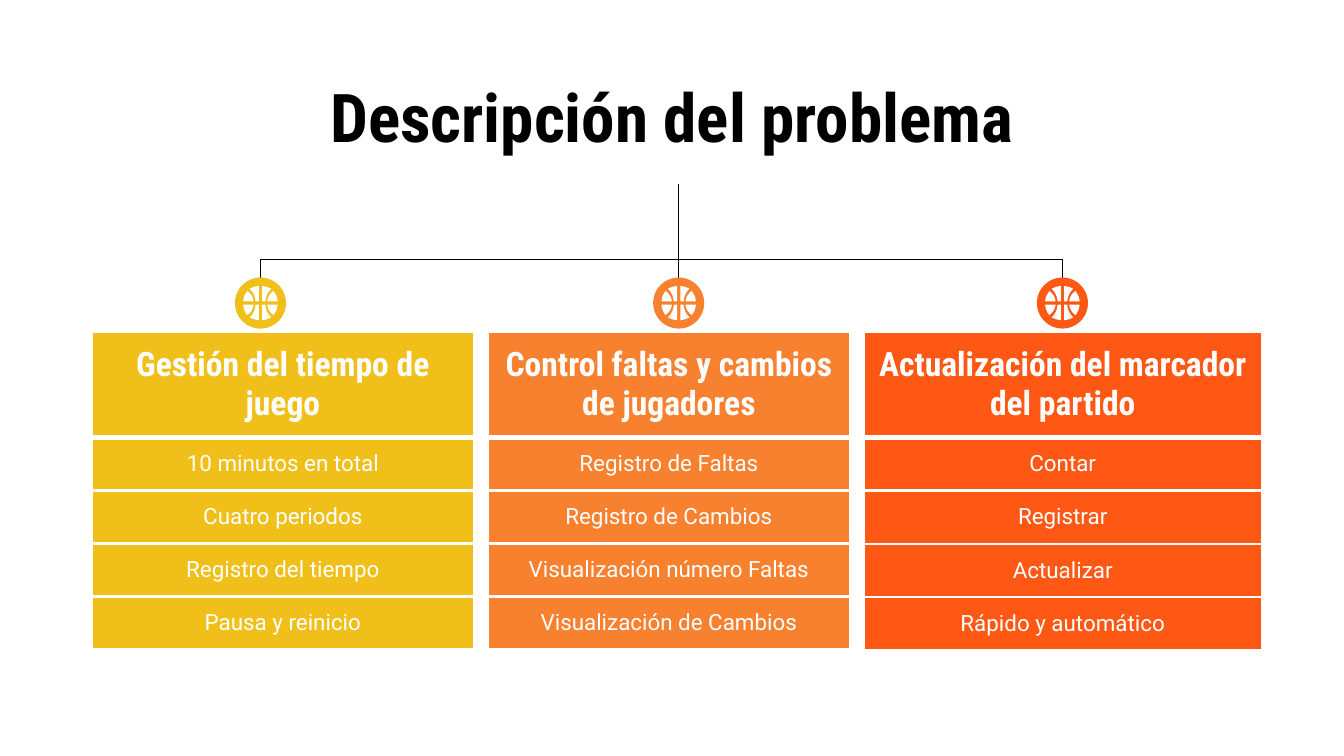
from dataclasses import dataclass
from itertools import product

from lxml import etree
from pptx import Presentation
from pptx.dml.color import RGBColor
from pptx.enum.shapes import MSO_CONNECTOR, MSO_SHAPE
from pptx.enum.text import MSO_ANCHOR, PP_ALIGN
from pptx.oxml.ns import qn
from pptx.util import Inches, Pt

STRAIGHT, ELBOW = MSO_CONNECTOR.STRAIGHT, MSO_CONNECTOR.ELBOW
OVAL = MSO_SHAPE.OVAL
TOP, MIDDLE, CENTER = MSO_ANCHOR.TOP, MSO_ANCHOR.MIDDLE, PP_ALIGN.CENTER
GRID_COLUMNS = 100
SLIDE_WIDTH = Inches(10)
Point = tuple[float, float]


@dataclass(frozen=True)
class Theme:
    black: str = "000000"
    white: str = "FFFFFF"
    yellow: str = "F0BF1A"
    orange: str = "F8812F"
    red: str = "FF5714"
    heading_font: str = "Roboto Condensed"
    body_font: str = "Roboto"
    title_size: float = 36
    heading_size: float = 18
    body_size: float = 12
    line: float = 0.75
    border: float = 1.5
    heavy_border: float = 3


@dataclass(frozen=True)
class Topic:
    left: float
    width: float
    ball_x: float
    color: str
    heading_height: float
    item_height: float
    heading: str
    items: tuple[str, ...]


@dataclass(frozen=True)
class Panel:
    points: tuple[Point, ...]
    curves: tuple[int, ...]


THEME = Theme()
TABLE_TOP, BALL_TOP, BALL_SIZE = 24.7, 20.65, 3.8
TRUNK_X, TRUNK_TOP, BRANCH_Y = 50.5, 13.7, 19.3
INSET, HEADING_INSET, ITEM_INSET = 1, 0.93, 0.97
TOPICS = (
    Topic(6.8, 28.5, 19.38, THEME.yellow, 5.2, 3.8, "Gestión del tiempo de juego",
          ("10 minutos en total", "Cuatro periodos", "Registro del tiempo", "Pausa y reinicio")),
    Topic(36.3, 26.95, TRUNK_X, THEME.orange, 5.2, 3.8, "Control faltas y cambios de jugadores",
          ("Registro de Faltas", "Registro de Cambios", "Visualización número Faltas",
           "Visualización de Cambios")),
    Topic(64.25, 29.65, 79.05, THEME.red, 7.8, 3.95, "Actualización del marcador del partido",
          ("Contar", "Registrar", "Actualizar", "Rápido y automático")),
)
INNER_PANEL = Panel(((0.12, 1.28), (0.37, 1.26), (0.6, 1.18), (0.8, 1.07),
                     (0.53, 0.81), (0.38, 0.49), (0.36, 0.12), (0.12, 0.12)), (1, 4))
OUTER_PANEL = Panel(((0.97, 0.9), (1.16, 0.69), (1.26, 0.42), (1.28, 0.12),
                     (0.5, 0.12), (0.54, 0.44), (0.7, 0.7), (0.97, 0.9)), (1, 5))


def u(units: float) -> int:
    return round(SLIDE_WIDTH * units / GRID_COLUMNS)


def rgb(color: str) -> RGBColor:
    return RGBColor.from_string(color)


def write(tf, text: str, font: str, size: float, color: str, bold: bool) -> None:
    tf.text = text
    p = tf.paragraphs[0]
    p.alignment = CENTER
    r = p.runs[0]
    r.font.name, r.font.size, r.font.bold = font, Pt(size), bold
    r.font.color.rgb = rgb(color)


def add_title(s, text: str) -> None:
    tf = s.shapes.add_textbox(u(5), u(4.6), u(90), u(6.3)).text_frame
    tf.word_wrap = True
    tf.vertical_anchor = TOP
    tf.margin_left = tf.margin_right = tf.margin_top = tf.margin_bottom = u(INSET)
    write(tf, text, THEME.heading_font, THEME.title_size, THEME.black, True)


def add_border(cell, side: str, width: float) -> None:
    tc_pr = cell._tc.get_or_add_tcPr()
    ln = etree.SubElement(tc_pr, qn(f"a:ln{side}"), w=str(Pt(width)))
    fill = etree.SubElement(ln, qn("a:solidFill"))
    etree.SubElement(fill, qn("a:srgbClr"), val=THEME.white)


def add_topic_table(s, topic: Topic) -> None:
    texts = (topic.heading, *topic.items)
    height = topic.heading_height + topic.item_height * len(topic.items)
    table = s.shapes.add_table(len(texts), 1, u(topic.left), u(TABLE_TOP),
                               u(topic.width), u(height)).table
    table.first_row = table.horz_banding = False
    for i, text in enumerate(texts):
        is_heading = i == 0
        table.rows[i].height = u(topic.heading_height if is_heading else topic.item_height)
        cell = table.cell(i, 0)
        cell.vertical_anchor = MIDDLE
        cell.margin_left = cell.margin_right = u(INSET)
        cell.margin_top = cell.margin_bottom = u(HEADING_INSET if is_heading else ITEM_INSET)
        heavy_side = {0: "B", 1: "T"}.get(i)
        for side in "LRTB":
            add_border(cell, side, THEME.heavy_border if side == heavy_side else THEME.border)
        cell.fill.solid()
        cell.fill.fore_color.rgb = rgb(topic.color)
        write(cell.text_frame, text,
              THEME.heading_font if is_heading else THEME.body_font,
              THEME.heading_size if is_heading else THEME.body_size, THEME.white, is_heading)


def add_line(s, start: Point, end: Point) -> None:
    is_bent = start[0] != end[0]
    c = s.shapes.add_connector(ELBOW if is_bent else STRAIGHT, *map(u, start + end))
    c.line.color.rgb = rgb(THEME.black)
    c.line.width = Pt(THEME.line)
    sp_pr = c._element.spPr
    if is_bent:
        sp_pr.find(qn("a:prstGeom")).set("prst", "bentConnector2")
    etree.SubElement(sp_pr, qn("a:effectLst"))


def fill_plain(sp, color: str) -> None:
    sp.shadow.inherit = False
    sp.fill.solid()
    sp.fill.fore_color.rgb = rgb(color)
    sp.line.fill.background()


def round_sides(sp, curves: tuple[int, ...]) -> None:
    outline = next(sp._element.iter(qn("a:path")))
    steps = list(outline)
    for first in curves:
        bezier = etree.Element(qn("a:cubicBezTo"))
        steps[first].addprevious(bezier)
        for step in steps[first:first + 3]:
            bezier.append(step[0])
            outline.remove(step)


def add_panel(s, panel: Panel, center: Point, sx: int, sy: int) -> None:
    points = [(u(center[0] + sx * x), u(center[1] + sy * y)) for x, y in panel.points]
    builder = s.shapes.build_freeform(*points[0])
    builder.add_line_segments(points[1:], close=True)
    sp = builder.convert_to_shape()
    round_sides(sp, panel.curves)
    fill_plain(sp, THEME.white)


def add_ball(s, topic: Topic) -> None:
    disc = s.shapes.add_shape(OVAL, u(topic.ball_x - BALL_SIZE / 2), u(BALL_TOP),
                              u(BALL_SIZE), u(BALL_SIZE))
    fill_plain(disc, topic.color)
    center = (topic.ball_x, BALL_TOP + BALL_SIZE / 2)
    for panel, sx, sy in product((INNER_PANEL, OUTER_PANEL), (-1, 1), (-1, 1)):
        add_panel(s, panel, center, sx, sy)


def main() -> None:
    prs = Presentation()
    prs.slide_width, prs.slide_height = SLIDE_WIDTH, u(56.25)
    s = prs.slides.add_slide(prs.slide_layouts[6])
    add_title(s, "Descripción del problema")
    for topic in TOPICS:
        add_topic_table(s, topic)
        add_line(s, (TRUNK_X, BRANCH_Y), (topic.ball_x, BALL_TOP))
        add_ball(s, topic)
    add_line(s, (TRUNK_X, BRANCH_Y), (TRUNK_X, TRUNK_TOP))
    prs.save("out.pptx")


if __name__ == "__main__":
    main()
